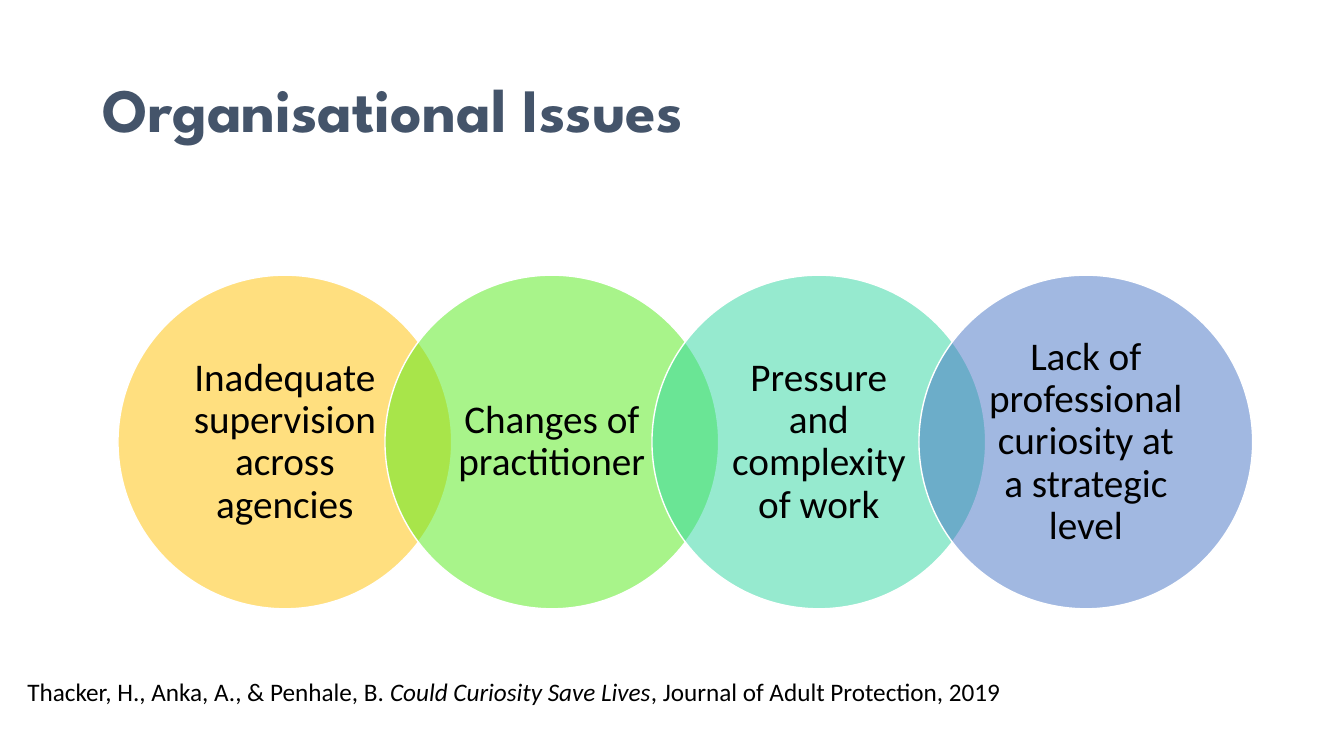
from dataclasses import dataclass

from lxml import etree
from pptx import Presentation
from pptx import util as u
from pptx.dml.color import RGBColor
from pptx.enum import shapes, text
from pptx.oxml.ns import qn

COLORS = {
    "title": "44546A", "text": "000000", "outline": "FFFFFF",
    "amber": "FFC000", "green": "53EB17", "teal": "2ED7A1", "blue": "4472C4",
}
WIDTH, HEIGHT = u.Inches(13.33), u.Inches(7.5)

# Chain of circles: each starts four fifths of a diameter after the last
DIAMETER = u.Inches(3.31)
STEP = 0.8 * DIAMETER
CHAIN_LEFT, CHAIN_TOP = u.Inches(1.17), u.Inches(2.73)


@dataclass
class Issue:
    label: str
    color: str


@dataclass
class Part:
    words: str
    italic: bool = False


ISSUES = [
    Issue("Inadequate supervision across agencies", "amber"),
    Issue("Changes of practitioner", "green"),
    Issue("Pressure and complexity of work", "teal"),
    Issue("Lack of professional curiosity at a strategic level", "blue"),
]
CITATION = [
    Part("Thacker, H., Anka, A., & Penhale, B. "),
    Part("Could Curiosity Save Lives", italic=True),
    Part(", Journal of Adult Protection, 2019"),
]


def rgb(name: str) -> RGBColor:
    return RGBColor.from_string(COLORS[name])


def style(r, size: float, color: str = "text", font: str = "Calibri",
          bold: bool = False, italic: bool = False) -> None:
    r.font.size, r.font.name = u.Pt(size), font
    r.font.bold, r.font.italic = bold, italic
    r.font.color.rgb = rgb(color)


def add_title(s, words: str) -> None:
    sp = s.shapes.title
    sp.left, sp.top = int(0.069 * WIDTH), int(0.053 * HEIGHT)
    sp.width, sp.height = int(0.863 * WIDTH), int(0.193 * HEIGHT)
    tf = sp.text_frame
    tf.text = words
    tf.auto_size = text.MSO_AUTO_SIZE.NONE
    tf.vertical_anchor = text.MSO_ANCHOR.MIDDLE
    p = tf.paragraphs[0]
    p.alignment, p.line_spacing = text.PP_ALIGN.LEFT, 0.9
    style(p.runs[0], 44, "title", "League Spartan", bold=True)


def add_circle(s, column: int, issue: Issue) -> None:
    sp = s.shapes.add_shape(shapes.MSO_SHAPE.OVAL, int(CHAIN_LEFT + column * STEP),
                            CHAIN_TOP, DIAMETER, DIAMETER)
    sp.shadow.inherit = False
    sp.fill.solid()
    sp.fill.fore_color.rgb = rgb(issue.color)
    # Half-transparent fill
    fill_color = sp.element.spPr.find(qn("a:solidFill"))[0]
    etree.SubElement(fill_color, qn("a:alpha")).set("val", "50000")
    sp.line.color.rgb, sp.line.width = rgb("outline"), u.Pt(1)

    tf = sp.text_frame
    tf.text = issue.label
    tf.word_wrap = True
    tf.vertical_anchor = text.MSO_ANCHOR.MIDDLE
    tf.margin_left = tf.margin_right = u.Inches(0.18)
    tf.margin_top = tf.margin_bottom = u.Inches(0.04)
    p = tf.paragraphs[0]
    p.alignment, p.line_spacing = text.PP_ALIGN.CENTER, 0.9
    style(p.runs[0], 28)


def add_citation(s, parts: list[Part]) -> None:
    sp = s.shapes.add_textbox(int(0.013 * WIDTH), int(0.888 * HEIGHT),
                              int(0.928 * WIDTH), int(0.054 * HEIGHT))
    tf = sp.text_frame
    tf.word_wrap = True
    tf.auto_size = text.MSO_AUTO_SIZE.SHAPE_TO_FIT_TEXT
    p = tf.paragraphs[0]
    for part in parts:
        r = p.add_run()
        r.text = part.words
        style(r, 18, italic=part.italic)


def main() -> None:
    prs = Presentation()
    prs.slide_width, prs.slide_height = WIDTH, HEIGHT
    s = prs.slides.add_slide(prs.slide_layouts[5])  # title only
    add_title(s, "Organisational Issues")
    for column, issue in enumerate(ISSUES):
        add_circle(s, column, issue)
    add_citation(s, CITATION)
    prs.save("out.pptx")


if __name__ == "__main__":
    main()
